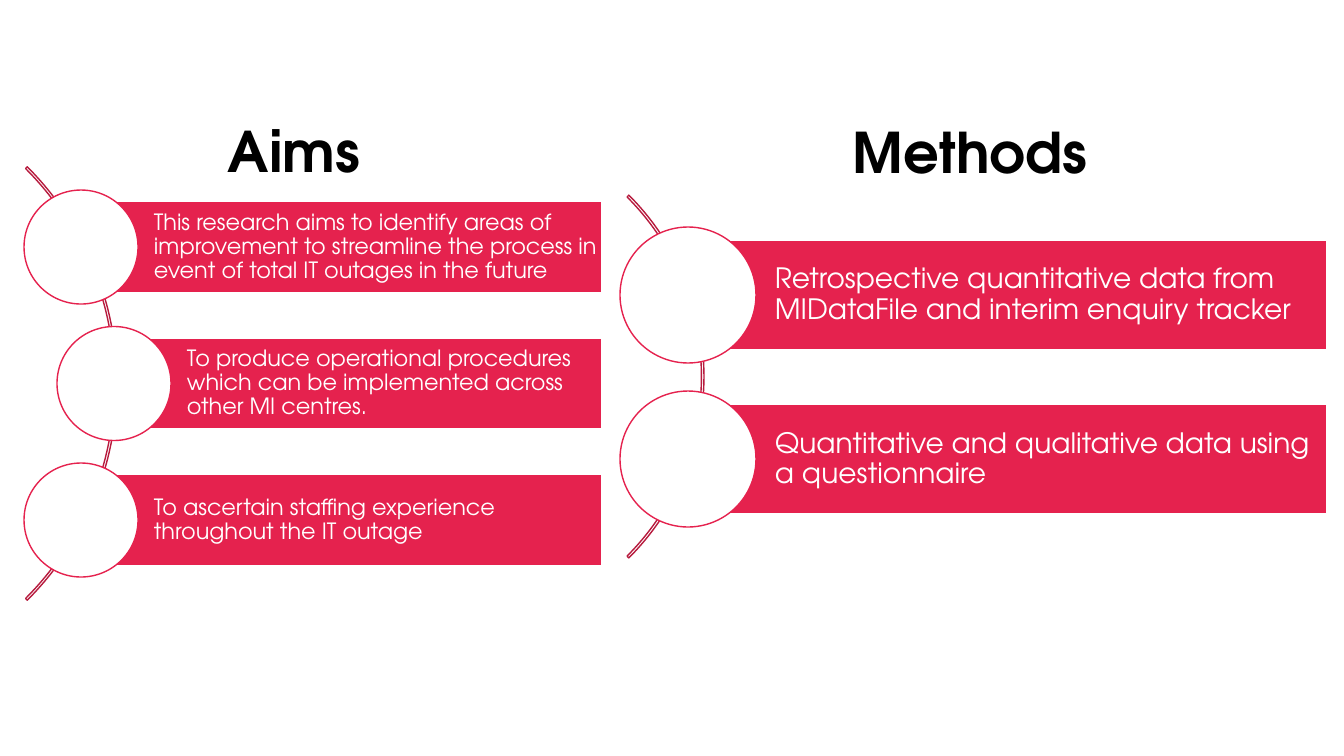
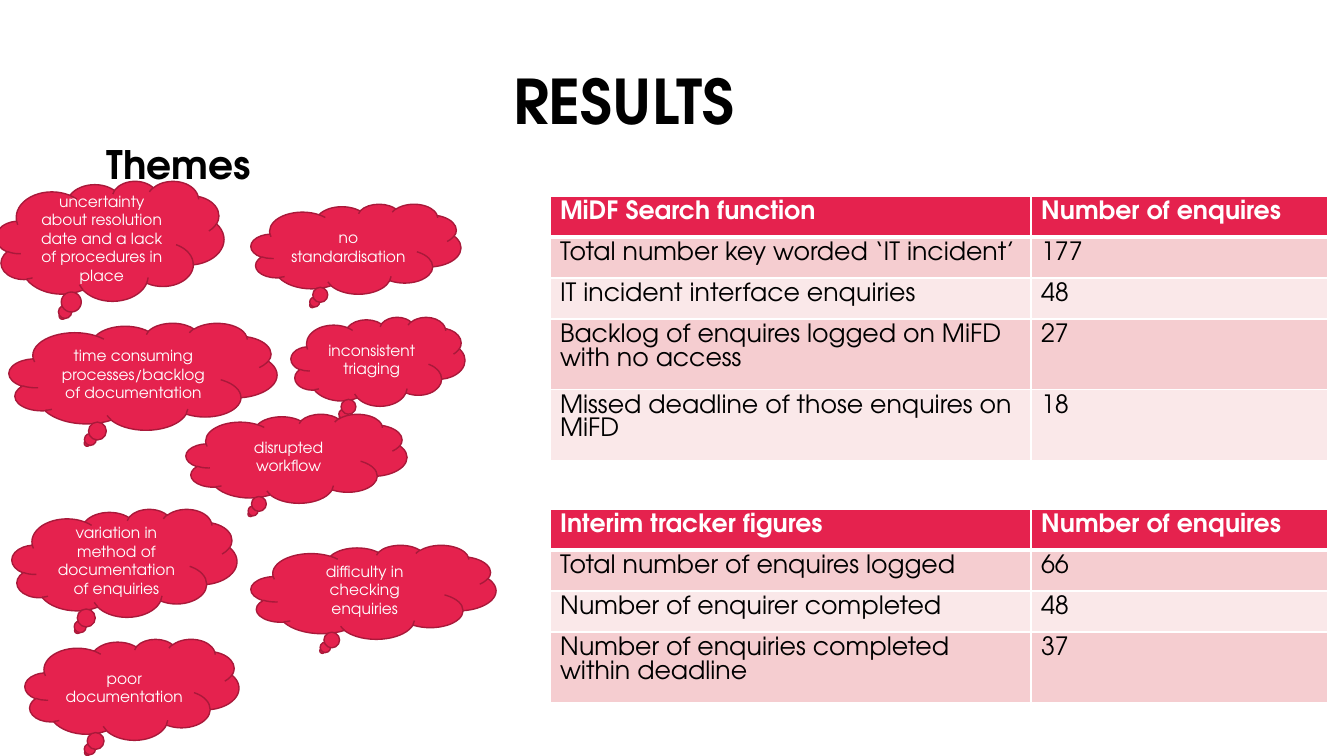
import pptx
import pptx.dml.color
import pptx.enum.shapes
import pptx.enum.text
import pptx.util
import pptx.oxml.ns
import lxml.etree

FONT = "TeX Gyre Adventor"
COLORS = {
    "red": "E5224E",
    "arc": "B71B3E",
    "cloud_line": "A9193A",
    "band_dark": "F5CDD0",
    "band_light": "FAE8E9",
    "white": "FFFFFF",
    "black": "000000",
}
SLIDE_WIDTH, SLIDE_HEIGHT = 1344, 756
EMU_PER_PX = 12192000 / SLIDE_WIDTH

SHAPES = pptx.enum.shapes.MSO_SHAPE
ALIGN = pptx.enum.text.PP_ALIGN
ANCHOR = pptx.enum.text.MSO_ANCHOR

# Headings: text, box, size, alignment, line spacing
AIMS_HEADINGS = [
    ("Methods", (843, 106, 263, 98), 40, ALIGN.LEFT, 0.9),
    ("Aims", (218, 111, 170, 78), 40, ALIGN.LEFT, 1.0),
]
RESULTS_HEADINGS = [
    ("RESULTS", (496, 74, 249, 62), 44, ALIGN.RIGHT, 0.9),
    ("Themes", (97, 135, 190, 57), 28, ALIGN.LEFT, 1.0),
]

# Each item is a text and the horizontal centre of its circle
CURVED_LISTS = [
    {
        "arc": (-496, 77, 613, 613), "arc_thickness": 0.004,
        "first_centre": 247, "last_centre": 520, "right": 602,
        "bar_height": 91, "diameter": 114, "indent": 73, "inset": 4, "size": 16,
        "items": [
            ("This research aims to identify areas of improvement to streamline "
             "the process in event of total IT outages in the future", 81),
            ("To produce operational procedures which can be implemented across "
             "other MI centres.", 114),
            ("To ascertain staffing experience throughout the IT outage", 81),
        ],
    },
    {
        "arc": (191, 120, 513, 513), "arc_thickness": 0.005,
        "first_centre": 295, "last_centre": 459, "right": 1327,
        "bar_height": 109, "diameter": 136, "indent": 87, "inset": 6, "size": 20,
        "items": [
            ("Retrospective quantitative data from MIDataFile and interim "
             "enquiry tracker", 688),
            ("Quantitative and qualitative data using a questionnaire", 688),
        ],
    },
]

THEMES = [
    ("inconsistent triaging", (291, 317, 174, 89)),
    ("disrupted workflow", (186, 414, 221, 89)),
    ("time consuming processes/backlog of documentation", (9, 323, 268, 107)),
    ("difficulty in checking enquiries", (251, 545, 245, 94)),
    ("variation in method of documentation of enquiries", (12, 509, 225, 108)),
    ("poor documentation", (25, 639, 214, 101)),
    ("no standardisation", (251, 204, 210, 90)),
    ("uncertainty about resolution date and a lack of procedures in place",
     (-4, 181, 228, 120)),
]

TABLE_LEFT = 550
COLUMN_WIDTHS = (481, 297)
# Each row is a label, a value and a height
TABLES = [
    (196, [
        ("MiDF Search function", "Number of enquires", 41),
        ("Total number key worded ‘IT incident’", "177", 41),
        ("IT incident interface enquiries", "48", 41),
        ("Backlog of enquires logged on MiFD with no access", "27", 70),
        ("Missed deadline of those enquires on MiFD", "18", 70),
    ]),
    (509, [
        ("Interim tracker figures", "Number of enquires", 41),
        ("Total number of enquires logged", "66", 41),
        ("Number of enquirer completed", "48", 41),
        ("Number of enquiries completed within deadline", "37", 70),
    ]),
]


def px(length):
    return round(length * EMU_PER_PX)


def rgb(name):
    return pptx.dml.color.RGBColor.from_string(COLORS[name])


def write(text_frame, text, size, color, bold=False, align=ALIGN.LEFT, spacing=None):
    paragraph = text_frame.paragraphs[0]
    paragraph.alignment = align
    paragraph.line_spacing = spacing
    run = paragraph.add_run()
    run.text = text
    run.font.name = FONT
    run.font.size = pptx.util.Pt(size)
    run.font.bold = bold
    run.font.color.rgb = rgb(color)


def add_heading(slide, text, box, size, align, spacing):
    text_frame = slide.shapes.add_textbox(*map(px, box)).text_frame
    text_frame.word_wrap = True
    text_frame.vertical_anchor = ANCHOR.MIDDLE
    write(text_frame, text, size, "black", True, align, spacing)


def add_shape(slide, kind, box, fill, line):
    shape = slide.shapes.add_shape(kind, *map(px, box))
    shape.shadow.inherit = False
    if fill:
        shape.fill.solid()
        shape.fill.fore_color.rgb = rgb(fill)
    else:
        shape.fill.background()
    shape.line.color.rgb = rgb(line)
    shape.line.width = pptx.util.Pt(1)
    shape.text_frame.word_wrap = True
    shape.text_frame.vertical_anchor = ANCHOR.MIDDLE
    return shape


def add_curved_list(slide, layout):
    """Draw bars headed by circles that are strung along an arc."""
    arc = add_shape(slide, SHAPES.BLOCK_ARC, layout["arc"], None, "arc")
    for index, value in enumerate((189, 27, layout["arc_thickness"])):
        arc.adjustments[index] = value

    items = layout["items"]
    step = (layout["last_centre"] - layout["first_centre"]) / (len(items) - 1)
    height, diameter = layout["bar_height"], layout["diameter"]
    for index, (text, centre_x) in enumerate(items):
        centre_y = layout["first_centre"] + index * step
        bar_box = (centre_x, centre_y - height / 2, layout["right"] - centre_x, height)
        bar = add_shape(slide, SHAPES.RECTANGLE, bar_box, "red", "white")
        text_frame = bar.text_frame
        text_frame.margin_left = px(layout["indent"])
        text_frame.margin_right = px(layout["inset"])
        text_frame.margin_top = text_frame.margin_bottom = px(layout["inset"])
        write(text_frame, text, layout["size"], "white", spacing=0.9)
        circle_box = (centre_x - diameter / 2, centre_y - diameter / 2, diameter, diameter)
        add_shape(slide, SHAPES.OVAL, circle_box, "white", "red")


def add_cell_borders(cell, top, bottom):
    """Add white borders; top and bottom are widths in points."""
    properties = cell._tc.get_or_add_tcPr()
    for side, width in (("L", 1), ("R", 1), ("T", top), ("B", bottom)):
        line = lxml.etree.SubElement(
            properties, pptx.oxml.ns.qn("a:ln" + side), w=str(pptx.util.Pt(width)))
        fill = lxml.etree.SubElement(line, pptx.oxml.ns.qn("a:solidFill"))
        lxml.etree.SubElement(fill, pptx.oxml.ns.qn("a:srgbClr"), val=COLORS["white"])


def add_results_table(slide, top, rows):
    total_height = sum(row[-1] for row in rows)
    box = (TABLE_LEFT, top, sum(COLUMN_WIDTHS), total_height)
    table = slide.shapes.add_table(len(rows), len(COLUMN_WIDTHS), *map(px, box)).table
    for column, width in zip(table.columns, COLUMN_WIDTHS):
        column.width = px(width)
    for row_index, (*texts, height) in enumerate(rows):
        table.rows[row_index].height = px(height)
        header = row_index == 0
        band = "band_dark" if row_index % 2 else "band_light"
        for column_index, text in enumerate(texts):
            cell = table.cell(row_index, column_index)
            add_cell_borders(cell, 3 if row_index == 1 else 1, 3 if header else 1)
            cell.fill.solid()
            cell.fill.fore_color.rgb = rgb("red" if header else band)
            write(cell.text_frame, text, 18, "white" if header else "black", header)


def add_slide(presentation, headings):
    slide = presentation.slides.add_slide(presentation.slide_layouts[6])
    for heading in headings:
        add_heading(slide, *heading)
    return slide


def main():
    presentation = pptx.Presentation()
    presentation.slide_width = px(SLIDE_WIDTH)
    presentation.slide_height = px(SLIDE_HEIGHT)

    aims_slide = add_slide(presentation, AIMS_HEADINGS)
    for layout in CURVED_LISTS:
        add_curved_list(aims_slide, layout)

    results_slide = add_slide(presentation, RESULTS_HEADINGS)
    for text, box in THEMES:
        cloud = add_shape(results_slide, SHAPES.CLOUD_CALLOUT, box, "red", "cloud_line")
        write(cloud.text_frame, text, 11, "white", align=ALIGN.CENTER)
    for top, rows in TABLES:
        add_results_table(results_slide, top, rows)

    presentation.save("out.pptx")


if __name__ == "__main__":
    main()
